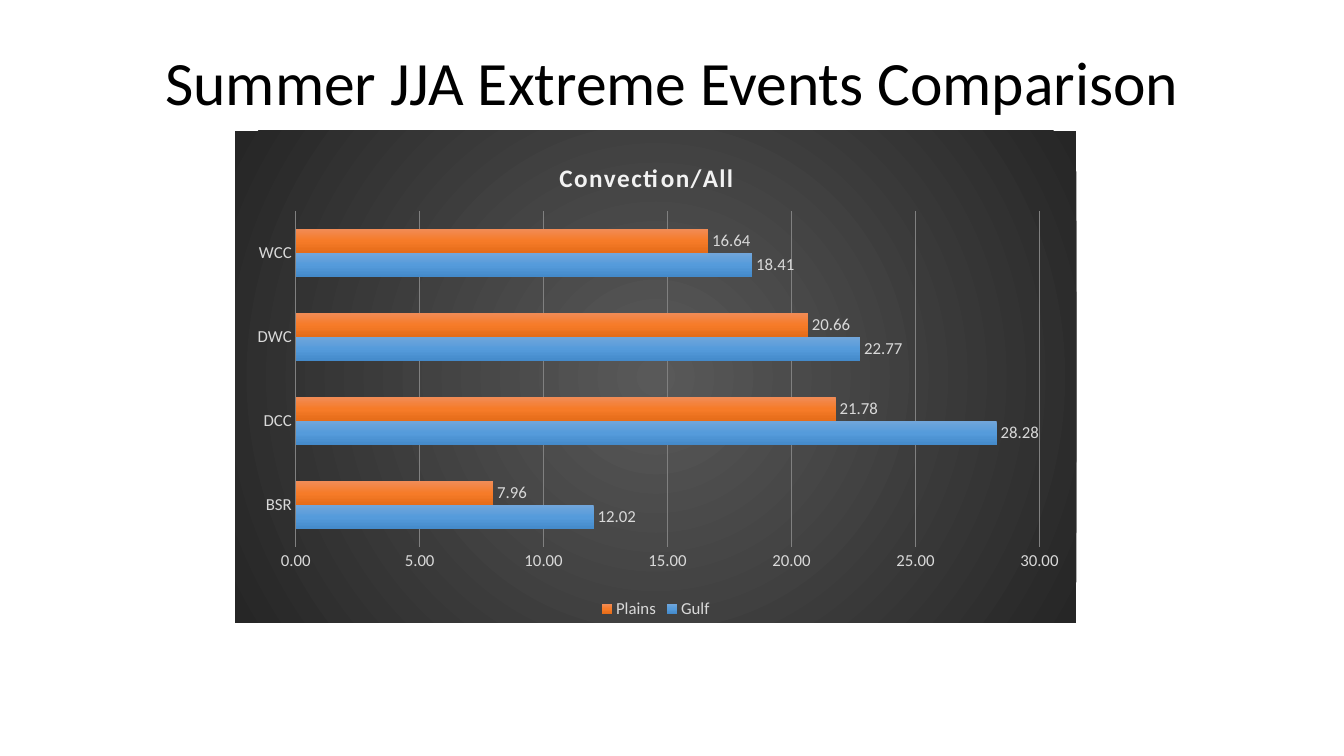
from dataclasses import dataclass

import pptx
import pptx.chart.data
import pptx.dml.color
import pptx.enum.chart
import pptx.enum.text
import pptx.oxml
import pptx.oxml.ns
import pptx.util


@dataclass(frozen=True)
class Theme:
    font: str = "Calibri"
    ink: str = "000000"
    label: str = "D9D9D9"
    heading: str = "F2F2F2"
    grid: str = "808080"
    backdrop: tuple[str, ...] = ("595959", "262626")
    title_size: int = 44
    heading_size: int = 18
    label_size: int = 12


@dataclass(frozen=True)
class Share:
    x: float
    y: float
    w: float
    h: float


@dataclass(frozen=True)
class Region:
    name: str
    values: tuple[float, ...]
    shades: tuple[str, ...]


THEME = Theme()
WIDTH, HEIGHT = pptx.util.Inches(13.33), pptx.util.Inches(7.5)
TITLE_BOX = Share(0.069, 0.053, 0.863, 0.12)
CHART_BOX = Share(0.175, 0.173, 0.626, 0.651)
PLOT_BOX = Share(0.072, 0.163, 0.884, 0.683)
CATEGORIES = ("BSR", "DCC", "DWC", "WCC")
REGIONS = (
    Region("Gulf", (12.02, 28.28, 22.77, 18.41), ("71A6DB", "559BDB", "448ACA")),
    Region("Plains", (7.96, 21.78, 20.66, 16.64), ("F18C57", "F67B28", "E56C19")),
)
NUMBER_FORMAT = "0.00"
LINEAR = '<a:lin ang="5400000" scaled="0"/>'
RADIAL = '<a:path path="circle"><a:fillToRect l="50000" t="50000" r="50000" b="50000"/></a:path>'


def place(box: Share) -> tuple[int, int, int, int]:
    return int(WIDTH * box.x), int(HEIGHT * box.y), int(WIDTH * box.w), int(HEIGHT * box.h)


def style_font(font, size: int, color: str, bold: bool = False) -> None:
    font.name = THEME.font
    font.size = pptx.util.Pt(size)
    font.bold = bold
    font.color.rgb = pptx.dml.color.RGBColor.from_string(color)


def gradient(shades: tuple[str, ...], direction: str):
    step = 100000 // (len(shades) - 1)
    stops = "".join(
        f'<a:gs pos="{i * step}"><a:srgbClr val="{shade}"/></a:gs>'
        for i, shade in enumerate(shades)
    )
    return pptx.oxml.parse_xml(
        f'<a:gradFill {pptx.oxml.ns.nsdecls("a")} rotWithShape="1">'
        f"<a:gsLst>{stops}</a:gsLst>{direction}</a:gradFill>"
    )


def manual_layout(fields: dict[str, str | float]):
    body = "".join(f'<c:{tag} val="{value}"/>' for tag, value in fields.items())
    return pptx.oxml.parse_xml(
        f'<c:layout {pptx.oxml.ns.nsdecls("c")}><c:manualLayout>{body}</c:manualLayout></c:layout>'
    )


def set_layout(element, layout, index: int) -> None:
    for old in element.findall(pptx.oxml.ns.qn("c:layout")):
        element.remove(old)
    element.insert(index, layout)


def add_title(s, text: str) -> None:
    sp = s.shapes.title
    sp.left, sp.top, sp.width, sp.height = place(TITLE_BOX)
    tf = sp.text_frame
    tf.vertical_anchor = pptx.enum.text.MSO_ANCHOR.MIDDLE
    p = tf.paragraphs[0]
    p.alignment = pptx.enum.text.PP_ALIGN.CENTER
    p.line_spacing = 0.9
    r = p.add_run()
    r.text = text
    style_font(r.font, THEME.title_size, THEME.ink)


def add_heading(chart, text: str) -> None:
    chart.has_title = True
    p = chart.chart_title.text_frame.paragraphs[0]
    r = p.add_run()
    r.text = text
    style_font(r.font, THEME.heading_size, THEME.heading, bold=True)
    r.font._element.set("spc", "100")
    chart.chart_title.include_in_layout = False
    layout = manual_layout({"xMode": "edge", "yMode": "edge", "x": 0.38, "y": 0.05})
    set_layout(chart.chart_title._element, layout, 1)


def style_axis(axis) -> None:
    style_font(axis.tick_labels.font, THEME.label_size, THEME.label)
    axis.format.line.fill.background()
    axis.major_tick_mark = pptx.enum.chart.XL_TICK_MARK.NONE
    axis.minor_tick_mark = pptx.enum.chart.XL_TICK_MARK.NONE


def style_series(series, region: Region) -> None:
    series.invert_if_negative = False
    series._element.get_or_add_spPr().append(gradient(region.shades, LINEAR))
    labels = series.data_labels
    labels.show_value = True
    labels.number_format = NUMBER_FORMAT
    labels.number_format_is_linked = False
    labels.position = pptx.enum.chart.XL_LABEL_POSITION.OUTSIDE_END
    style_font(labels.font, THEME.label_size, THEME.label)


def add_comparison(s) -> None:
    data = pptx.chart.data.CategoryChartData(number_format=NUMBER_FORMAT)
    data.categories = CATEGORIES
    for region in REGIONS:
        data.add_series(region.name, region.values)
    chart = s.shapes.add_chart(
        pptx.enum.chart.XL_CHART_TYPE.BAR_CLUSTERED, *place(CHART_BOX), data
    ).chart
    style_font(chart.font, 10, THEME.ink)
    add_heading(chart, "Convection/All")

    chart.has_legend = True
    chart.legend.position = pptx.enum.chart.XL_LEGEND_POSITION.BOTTOM
    chart.legend.include_in_layout = False
    style_font(chart.legend.font, THEME.label_size, THEME.label)

    style_axis(chart.category_axis)
    values = chart.value_axis
    style_axis(values)
    values.minimum_scale, values.maximum_scale, values.major_unit = 0, 30, 5
    values.tick_labels.number_format = NUMBER_FORMAT
    values.tick_labels.number_format_is_linked = False
    values.has_major_gridlines = True
    line = values.major_gridlines.format.line
    line.width = pptx.util.Pt(0.75)
    line.color.rgb = pptx.dml.color.RGBColor.from_string(THEME.grid)

    plot = chart.plots[0]
    plot.gap_width = 150
    plot.overlap = 0
    plot.vary_by_categories = False
    for series, region in zip(plot.series, REGIONS):
        style_series(series, region)

    space = chart._chartSpace
    area = space.chart.plotArea
    set_layout(area, manual_layout({
        "layoutTarget": "inner", "xMode": "edge", "yMode": "edge",
        "x": PLOT_BOX.x, "y": PLOT_BOX.y, "w": PLOT_BOX.w, "h": PLOT_BOX.h,
    }), 0)
    backdrop = pptx.oxml.parse_xml(
        f'<c:spPr {pptx.oxml.ns.nsdecls("c", "a")}><a:ln><a:noFill/></a:ln></c:spPr>'
    )
    backdrop.insert(0, gradient(THEME.backdrop, RADIAL))
    space.chart.addnext(backdrop)


def main() -> None:
    prs = pptx.Presentation()
    prs.slide_width, prs.slide_height = WIDTH, HEIGHT
    s = prs.slides.add_slide(prs.slide_layouts.get_by_name("Title Only"))
    add_title(s, "Summer JJA Extreme Events Comparison")
    add_comparison(s)
    prs.save("out.pptx")


if __name__ == "__main__":
    main()
